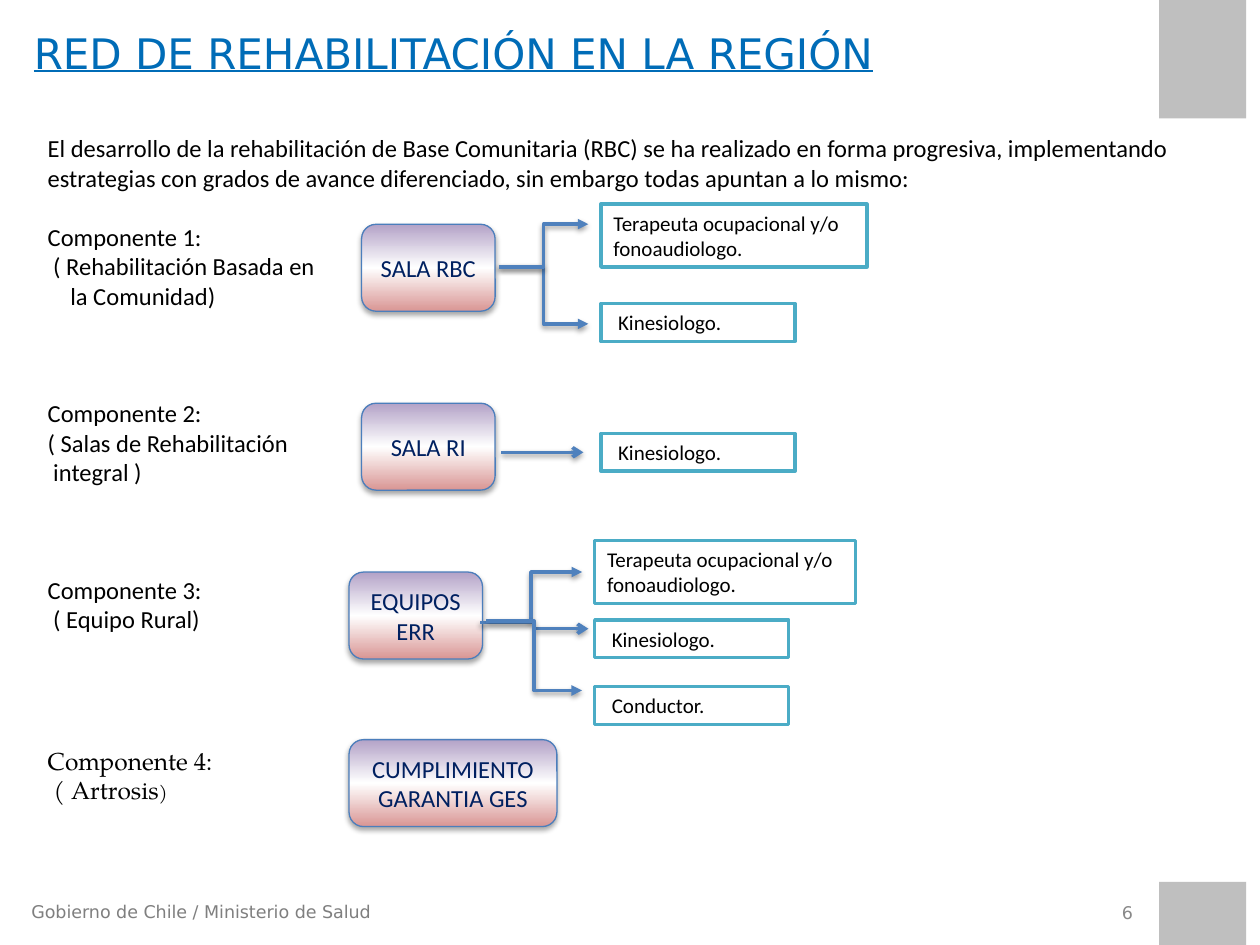
from lxml import etree
from pptx import Presentation, util as u
from pptx.dml.color import RGBColor
from pptx.enum import shapes, text
from pptx.oxml import parse_xml
from pptx.oxml.ns import nsdecls, qn

BLUE = RGBColor(0x00, 0x6C, 0xB7)
NAVY = RGBColor(0x00, 0x20, 0x60)
BLACK = RGBColor(0, 0, 0)
WHITE = RGBColor(0xFF, 0xFF, 0xFF)
CORNER_GRAY = RGBColor(0xBF, 0xBF, 0xBF)
FOOTER_GRAY = RGBColor(0x7F, 0x7F, 0x7F)
NUMBER_GRAY = RGBColor(0x89, 0x89, 0x89)
NODE_EDGE = RGBColor(0x4B, 0x7E, 0xBC)
LINK_BLUE = RGBColor(0x4F, 0x81, 0xBD)
ROLE_EDGE = RGBColor(0x4B, 0xAC, 0xC6)
ROSE = RGBColor(0xD9, 0x96, 0x94)
LILAC = RGBColor(0xB3, 0xA2, 0xC7)

WIDTH, HEIGHT = u.Inches(10), u.Inches(7.5)
COL, ROW = WIDTH / 100, HEIGHT / 75

INTRO = (
    "El desarrollo de la rehabilitación de Base Comunitaria (RBC) se ha realizado en forma "
    "progresiva, implementando estrategias con grados de avance diferenciado, sin embargo "
    "todas apuntan a lo mismo:"
)
DESCRIPTIONS = [
    (INTRO, 0, 0),
    ("Componente 1:", 1, 0),
    (" ( Rehabilitación Basada en", 0, 0),
    ("la Comunidad)", 0, 0.18),
    ("Componente 2:", 3, 0),
    ("( Salas de Rehabilitación", 0, 0),
    (" integral )", 0, 0),
    ("Componente 3:", 3, 0),
    (" ( Equipo Rural)", 0, 0),
]
LINE_PITCH = 16.8
THERAPIST = "Terapeuta ocupacional y/o fonoaudiologo."
PHYSIO = " Kinesiologo."
DRIVER = " Conductor."

COMPONENTS = [
    ((28.7, 17.8, 10.6, 6.9), "SALA RBC",
     [(THERAPIST, 19, -1.6, 21.1, 5), (PHYSIO, 19, 6.3, 15.4, 3)],
     [(10.9, 3.4, 18, 7.9), (10.9, 3.4, 18, 0)]),
    ((28.7, 32, 10.6, 6.9), "SALA RI",
     [(PHYSIO, 19, 2.4, 15.4, 3)],
     [(11.1, 3.9, 17.6, 3.9)]),
    ((27.7, 45.4, 10.6, 6.9), "EQUIPOS ERR",
     [(THERAPIST, 19.5, -2.5, 20.7, 5), (PHYSIO, 19.5, 3.8, 15.4, 3),
      (DRIVER, 19.5, 9.1, 15.4, 3)],
     [(10.4, 4, 18.5, 0), (14.8, 4.5, 19, 4.5), (10.9, 3.9, 18.5, 9.4)]),
    ((27.7, 58.7, 16.5, 6.9), "CUMPLIMIENTO GARANTIA GES", [], []),
]


def cells(x, y, w, h):
    return [round(v) for v in (x * COL, y * ROW, w * COL, h * ROW)]


def style(paragraph, size, color, font="Calibri", align=text.PP_ALIGN.LEFT):
    paragraph.alignment = align
    paragraph.font.size = u.Pt(size)
    paragraph.font.name = font
    paragraph.font.color.rgb = color


def cast_shadow(element, alpha, distance):
    properties = element.spPr
    for old in properties.findall(qn("a:effectLst")):
        properties.remove(old)
    properties.append(parse_xml(
        f'<a:effectLst {nsdecls("a")}><a:outerShdw blurRad="{u.Pt(3.1)}" '
        f'dist="{u.Pt(distance)}" dir="5400000" rotWithShape="0">'
        f'<a:srgbClr val="{BLACK}"><a:alpha val="{alpha * 1000}"/></a:srgbClr>'
        f'</a:outerShdw></a:effectLst>'))


def fill_sheen(shape):
    shape.fill.gradient()
    stops = shape._element.spPr.find(qn("a:gradFill")).find(qn("a:gsLst"))
    for old in list(stops):
        stops.remove(old)
    for position, color in ((0, ROSE), (50, WHITE), (100, LILAC)):
        stop = etree.SubElement(stops, qn("a:gs"), pos=str(position * 1000))
        etree.SubElement(stop, qn("a:srgbClr"), val=str(color))
    shape.fill.gradient_angle = 90


def add_box(slide, kind, box):
    shape = slide.shapes.add_shape(kind, *cells(*box))
    shape.shadow.inherit = False
    shape.text_frame.word_wrap = True
    return shape


def add_text(slide, box):
    frame = slide.shapes.add_textbox(*cells(*box)).text_frame
    frame.word_wrap = True
    return frame


def add_label(slide, box, words, *look):
    frame = add_text(slide, box)
    frame.text = words
    style(frame.paragraphs[0], *look)
    return frame


def corner(slide, box):
    block = add_box(slide, shapes.MSO_SHAPE.RECTANGLE, box)
    block.fill.solid()
    block.fill.fore_color.rgb = CORNER_GRAY
    block.line.fill.background()


def footer(slide, box):
    left, top, width, height = box
    add_label(slide, (left, top, 30.2, height), "Gobierno de Chile / Ministerio de Salud",
              10, FOOTER_GRAY, "DejaVu Sans")
    number = add_label(slide, (left + width - 23.3, top + 0.4, 23.3, 2.1), "6",
                       10, NUMBER_GRAY, "DejaVu Sans", text.PP_ALIGN.RIGHT)
    number.vertical_anchor = text.MSO_ANCHOR.MIDDLE


def title(slide, box):
    heading = add_label(slide, box, "RED DE REHABILITACIÓN EN LA REGIÓN",
                        24, BLUE, "DejaVu Sans")
    heading.paragraphs[0].font.underline = True


def descriptions(slide, box):
    frame = add_text(slide, box)
    for index, (words, gap_lines, indent) in enumerate(DESCRIPTIONS):
        paragraph = frame.paragraphs[0] if index == 0 else frame.add_paragraph()
        paragraph.text = words
        style(paragraph, 14, BLACK)
        paragraph.space_before = u.Pt(gap_lines * LINE_PITCH)
        paragraph._p.get_or_add_pPr().set("marL", str(u.Inches(indent)))


def arthrosis(slide, box):
    frame = add_text(slide, box)
    frame.text = "Componente 4:\n ( Artrosis"
    for paragraph in frame.paragraphs:
        style(paragraph, 14, BLACK, "TeX Gyre Pagella", text.PP_ALIGN.JUSTIFY)
    closing = frame.paragraphs[1].add_run()
    closing.text = ")"
    closing.font.size = u.Pt(11)


def link(slide, x1, y1, x2, y2):
    straight = y1 == y2
    kind = shapes.MSO_CONNECTOR.STRAIGHT if straight else shapes.MSO_CONNECTOR.ELBOW
    arrow = slide.shapes.add_connector(kind, *cells(x1, y1, x2, y2))
    arrow.line.color.rgb = LINK_BLUE
    arrow.line.width = u.Pt(2)
    etree.SubElement(arrow.line._get_or_add_ln(), qn("a:tailEnd"),
                     type="arrow" if straight else "triangle")
    cast_shadow(arrow._element, 38, 1.6)


def component(slide, box, name, roles, links):
    left, top = box[:2]
    node = add_box(slide, shapes.MSO_SHAPE.ROUNDED_RECTANGLE, box)
    fill_sheen(node)
    node.line.color.rgb = NODE_EDGE
    node.line.width = u.Pt(0.75)
    cast_shadow(node._element, 35, 1.8)
    node.text_frame.text = name
    node.text_frame.vertical_anchor = text.MSO_ANCHOR.MIDDLE
    style(node.text_frame.paragraphs[0], 14, NAVY, align=text.PP_ALIGN.CENTER)
    for x1, y1, x2, y2 in links:
        link(slide, left + x1, top + y1, left + x2, top + y2)
    for words, x, y, w, h in roles:
        role = add_box(slide, shapes.MSO_SHAPE.RECTANGLE, (left + x, top + y, w, h))
        role.fill.solid()
        role.fill.fore_color.rgb = WHITE
        role.line.color.rgb = ROLE_EDGE
        role.line.width = u.Pt(2)
        role.text_frame.text = words
        role.text_frame.vertical_anchor = text.MSO_ANCHOR.TOP
        style(role.text_frame.paragraphs[0], 12, BLACK)


def main():
    deck = Presentation()
    deck.slide_width, deck.slide_height = WIDTH, HEIGHT
    slide = deck.slides.add_slide(deck.slide_layouts[6])
    corner(slide, (92, 0, 6.9, 9.4))
    corner(slide, (92, 70, 6.9, 5))
    footer(slide, (1.5, 71, 89.4, 2.7))
    descriptions(slide, (2.8, 10.1, 97.2, 48.1))
    arthrosis(slide, (2.8, 58.7, 50, 5.7))
    for part in COMPONENTS:
        component(slide, *part)
    title(slide, (1.7, 1.7, 89.3, 12.5))
    deck.save("out.pptx")


if __name__ == "__main__":
    main()
